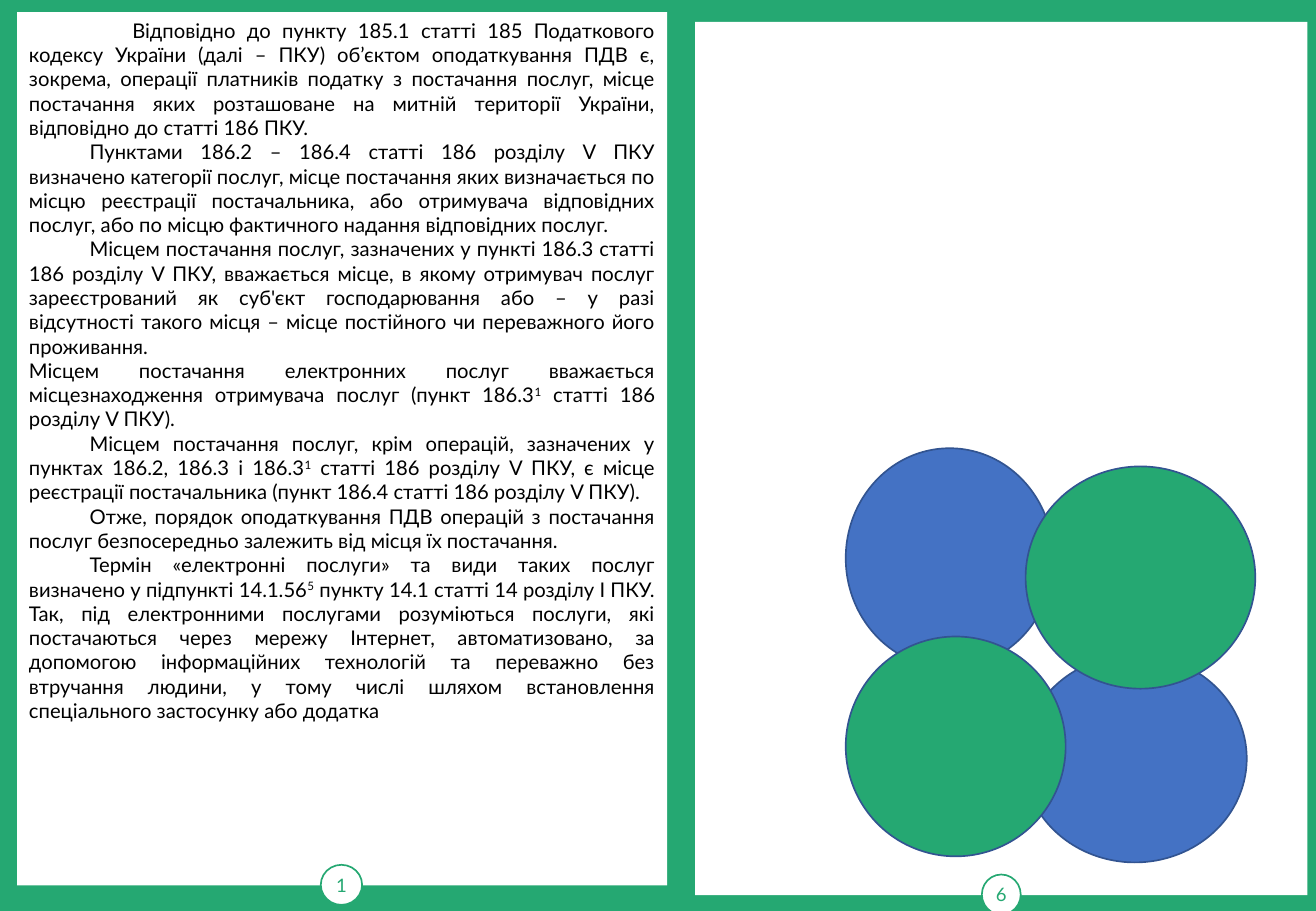
"""Build a two-page brochure spread about the place of supply of services."""
from dataclasses import dataclass

from pptx import Presentation
from pptx.dml.color import RGBColor
from pptx.enum.shapes import MSO_SHAPE
from pptx.enum.text import MSO_ANCHOR, PP_ALIGN
from pptx.util import Inches, Pt

RECTANGLE = MSO_SHAPE.RECTANGLE
ELLIPSE = MSO_SHAPE.OVAL
CONNECTOR_CIRCLE = MSO_SHAPE.FLOWCHART_CONNECTOR
MIDDLE = MSO_ANCHOR.MIDDLE
CENTER = PP_ALIGN.CENTER
JUSTIFY = PP_ALIGN.JUSTIFY
BLANK_LAYOUT = 6


@dataclass(frozen=True)
class Theme:
    green: RGBColor = RGBColor(0x25, 0xA8, 0x72)
    blue: RGBColor = RGBColor(0x44, 0x72, 0xC4)
    outline: RGBColor = RGBColor(0x32, 0x54, 0x91)
    white: RGBColor = RGBColor(0xFF, 0xFF, 0xFF)
    black: RGBColor = RGBColor(0x00, 0x00, 0x00)
    font: str = "Lato"
    body_size: int = 12
    number_size: int = 11
    line_width: int = 1


THEME = Theme()

PAGES = [
    ((0.14, 0.1, 5.35, 7.19), (2.64, 7.12, 0.34, 0.33), "1"),
    ((5.72, 0.18, 5.04, 7.19), (8.08, 7.2, 0.32, 0.33), "6"),
]

CIRCLES = [
    ((6.96, 3.69, 1.71, 1.81), THEME.blue),
    ((8.42, 5.39, 1.84, 1.71), THEME.blue),
    ((6.96, 5.24, 1.81, 1.81), THEME.green),
    ((8.44, 3.84, 1.89, 1.83), THEME.green),
]

ARTICLE_BOX = (0.14, 0.1, 5.35, 6.97)
SUPERSCRIPT_MARK = "^"
ARTICLE = [
    (0.85, "Відповідно до пункту 185.1 статті 185 Податкового кодексу України (далі – ПКУ) "
           "об’єктом оподаткування ПДВ є, зокрема, операції платників податку з постачання "
           "послуг, місце постачання яких розташоване на митній території України, "
           "відповідно до статті 186 ПКУ."),
    (0.5, "Пунктами 186.2 – 186.4 статті 186 розділу V ПКУ визначено категорії послуг, місце "
          "постачання яких визначається по місцю реєстрації постачальника, або отримувача "
          "відповідних послуг, або по місцю фактичного надання відповідних послуг."),
    (0.5, "Місцем постачання послуг, зазначених у пункті 186.3 статті 186 розділу V ПКУ, "
          "вважається місце, в якому отримувач послуг зареєстрований як суб'єкт "
          "господарювання або – у разі відсутності такого місця – місце постійного чи "
          "переважного його проживання."),
    (0, "Місцем постачання електронних послуг вважається місцезнаходження отримувача послуг "
        "(пункт 186.3^1^ статті 186 розділу V ПКУ)."),
    (0.5, "Місцем постачання послуг, крім операцій, зазначених у пунктах 186.2, 186.3 і "
          "186.3^1^ статті 186 розділу V ПКУ, є місце реєстрації постачальника "
          "(пункт 186.4 статті 186 розділу V ПКУ)."),
    (0.5, "Отже, порядок оподаткування ПДВ операцій з постачання послуг безпосередньо "
          "залежить від місця їх постачання."),
    (0.5, "Термін «електронні послуги» та види таких послуг визначено у підпункті "
          "14.1.56^5^ пункту 14.1 статті 14 розділу I ПКУ. Так, під електронними послугами "
          "розуміються послуги, які постачаються через мережу Інтернет, автоматизовано, за "
          "допомогою інформаційних технологій та переважно без втручання людини, у тому "
          "числі шляхом встановлення спеціального застосунку або додатка"),
]


class SpreadBuilder:
    def __init__(self, slide, theme):
        self.slide = slide
        self.theme = theme

    def apply(self, target, values):
        for name, value in values.items():
            setattr(target, name, value)

    def format_font(self, font, size, color):
        self.apply(font, {"name": self.theme.font, "size": Pt(size)})
        font.color.rgb = color

    def background(self, color):
        fill = self.slide.background.fill
        fill.solid()
        fill.fore_color.rgb = color

    def shape(self, kind, box, fill, line=None):
        shape = self.slide.shapes.add_shape(kind, *map(Inches, box))
        shape.shadow.inherit = False
        shape.fill.solid()
        shape.fill.fore_color.rgb = fill
        if line is None:
            shape.line.fill.background()
        else:
            shape.line.color.rgb = line
            shape.line.width = Pt(self.theme.line_width)
        return shape

    def page_number(self, box, number):
        badge = self.shape(ELLIPSE, box, self.theme.white, self.theme.green)
        frame = badge.text_frame
        self.apply(frame, {
            "margin_left": 0, "margin_right": 0, "margin_top": 0, "margin_bottom": 0,
            "vertical_anchor": MIDDLE, "word_wrap": False, "text": number,
        })
        paragraph = frame.paragraphs[0]
        paragraph.alignment = CENTER
        self.format_font(paragraph.runs[0].font, self.theme.number_size, self.theme.green)

    def article(self, box, paragraphs):
        frame = self.slide.shapes.add_textbox(*map(Inches, box)).text_frame
        frame.word_wrap = True
        for index, (indent, text) in enumerate(paragraphs):
            paragraph = frame.add_paragraph() if index else frame.paragraphs[0]
            paragraph.alignment = JUSTIFY
            properties = paragraph._p.get_or_add_pPr()
            properties.set("marL", "0")
            properties.set("indent", str(Inches(indent)))
            for part, piece in enumerate(text.split(SUPERSCRIPT_MARK)):
                run = paragraph.add_run()
                run.text = piece
                self.format_font(run.font, self.theme.body_size, self.theme.black)
                if part % 2:
                    run._r.get_or_add_rPr().set("baseline", "30000")


def main():
    presentation = Presentation()
    presentation.slide_width = Inches(10.83)
    presentation.slide_height = Inches(7.5)
    slide = presentation.slides.add_slide(presentation.slide_layouts[BLANK_LAYOUT])
    builder = SpreadBuilder(slide, THEME)
    builder.background(THEME.green)
    for page_box, number_box, number in PAGES:
        builder.shape(RECTANGLE, page_box, THEME.white)
        builder.page_number(number_box, number)
    for circle_box, color in CIRCLES:
        builder.shape(CONNECTOR_CIRCLE, circle_box, color, THEME.outline)
    builder.article(ARTICLE_BOX, ARTICLE)
    presentation.save("out.pptx")


if __name__ == "__main__":
    main()
